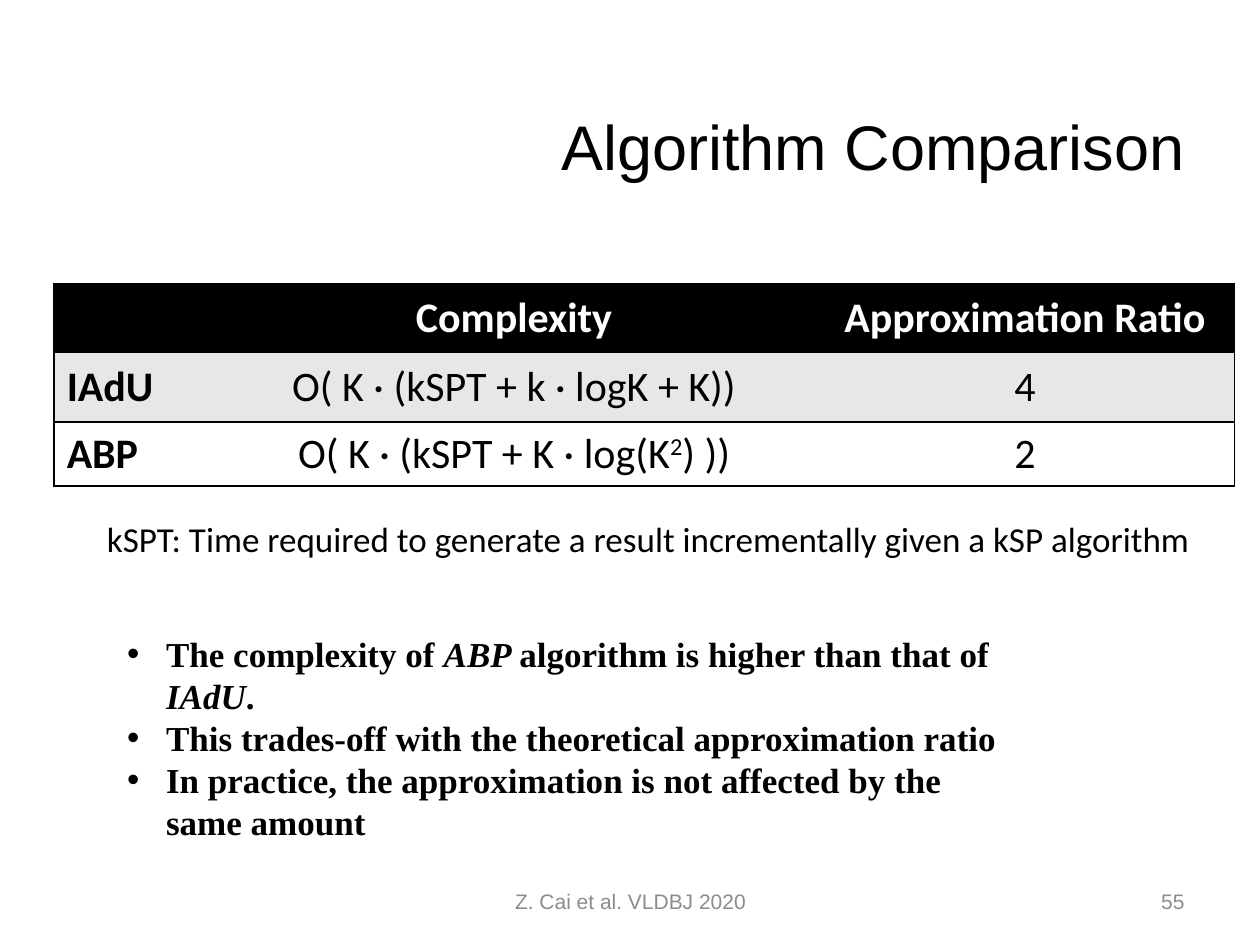
from lxml import etree
from pptx import Presentation
from pptx.dml.color import RGBColor
from pptx.enum.text import MSO_ANCHOR, PP_ALIGN
from pptx.oxml.ns import qn
from pptx.util import Inches, Pt

LEFT, CENTER, RIGHT = PP_ALIGN.LEFT, PP_ALIGN.CENTER, PP_ALIGN.RIGHT
TOP, MIDDLE = MSO_ANCHOR.TOP, MSO_ANCHOR.MIDDLE
SLIDE_WIDTH, SLIDE_HEIGHT = Inches(10), Inches(7.5)
COLORS = {"black": "000000", "white": "FFFFFF", "band": "E7E7E7", "footer": "8C8C8C"}

COLUMN_SHARES = (12.6, 47.8, 33.3)
ROW_SHARES = (7.33, 7.33, 6.8)
ROW_FILLS = ("black", "band", "white")
# Text pieces are (text, style); style is "", "italic" or "superscript".
COMPARISON = [
    [[], [("Complexity", "")], [("Approximation Ratio", "")]],
    [[("IAdU", "")], [("O( K · (kSPT + k · logK + K))", "")], [("4", "")]],
    [[("ABP", "")],
     [("O( K · (kSPT + K · log(K", ""), ("2", "superscript"), (") ))", "")],
     [("2", "")]],
]
FINDINGS = [
    [("The complexity of ", ""), ("ABP ", "italic"),
     ("algorithm is higher than that of ", ""), ("IAdU", "italic"), (".", "")],
    [("This trades-off with the theoretical approximation ratio", "")],
    [("In practice, the approximation is not affected by the same amount", "")],
]


def across(share):
    """Length of a percentage of the slide width."""
    return int(SLIDE_WIDTH * share / 100)


def down(share):
    """Length of a percentage of the slide height."""
    return int(SLIDE_HEIGHT * share / 100)


def write_pieces(paragraph, pieces, font_name, size, color, bold=False):
    for text, style in pieces:
        run = paragraph.add_run()
        run.text = text
        run.font.name = font_name
        run.font.size = Pt(size)
        run.font.bold = bold
        run.font.italic = style == "italic"
        run.font.color.rgb = RGBColor.from_string(COLORS[color])
        if style == "superscript":
            run._r.get_or_add_rPr().set("baseline", "30000")


def add_text_frame(slide, shares, anchor=TOP):
    """Add a wrapping text box at left, top, width, height in percent."""
    left, top, width, height = shares
    box = slide.shapes.add_textbox(across(left), down(top), across(width), down(height))
    box.text_frame.word_wrap = True
    box.text_frame.vertical_anchor = anchor
    return box.text_frame


def add_line_of_text(slide, shares, text, font_name, size, color="black",
                     alignment=LEFT, anchor=MIDDLE):
    paragraph = add_text_frame(slide, shares, anchor).paragraphs[0]
    paragraph.alignment = alignment
    write_pieces(paragraph, [(text, "")], font_name, size, color)


def add_bullets(slide, shares, items):
    text_frame = add_text_frame(slide, shares)
    for index, pieces in enumerate(items):
        paragraph = text_frame.add_paragraph() if index else text_frame.paragraphs[0]
        properties = paragraph._p.get_or_add_pPr()
        properties.set("marL", str(Inches(0.31)))
        properties.set("indent", str(-Inches(0.31)))
        etree.SubElement(properties, qn("a:buFont")).set("typeface", "Arial")
        etree.SubElement(properties, qn("a:buChar")).set("char", "•")
        write_pieces(paragraph, pieces, "Times New Roman", 20, "black", bold=True)


def set_borders(cell, visible_sides):
    properties = cell._tc.get_or_add_tcPr()
    for side in "LRTB":
        line = etree.SubElement(properties, qn(f"a:ln{side}"), w=str(Pt(1)))
        if side in visible_sides:
            fill = etree.SubElement(line, qn("a:solidFill"))
            etree.SubElement(fill, qn("a:srgbClr")).set("val", COLORS["black"])
        else:
            etree.SubElement(line, qn("a:noFill"))


def add_comparison_table(slide, left, top):
    frame = slide.shapes.add_table(
        len(ROW_SHARES), len(COLUMN_SHARES), across(left), down(top),
        across(sum(COLUMN_SHARES)), down(sum(ROW_SHARES)))
    table = frame.table
    table.first_row = table.horz_banding = False
    for column, share in zip(table.columns, COLUMN_SHARES):
        column.width = across(share)
    for row, share in zip(table.rows, ROW_SHARES):
        row.height = down(share)

    outer_sides = ("LTB", "TB", "TBR")
    for row_index, row_cells in enumerate(COMPARISON):
        is_header = row_index == 0
        for column_index, pieces in enumerate(row_cells):
            cell = table.cell(row_index, column_index)
            set_borders(cell, outer_sides[column_index])
            cell.fill.solid()
            cell.fill.fore_color.rgb = RGBColor.from_string(COLORS[ROW_FILLS[row_index]])
            cell.vertical_anchor = MIDDLE
            paragraph = cell.text_frame.paragraphs[0]
            paragraph.alignment = CENTER if column_index else LEFT
            write_pieces(paragraph, pieces, "Calibri", 24,
                         "white" if is_header else "black",
                         bold=is_header or column_index == 0)


def main():
    presentation = Presentation()
    presentation.slide_width, presentation.slide_height = SLIDE_WIDTH, SLIDE_HEIGHT
    slide = presentation.slides.add_slide(presentation.slide_layouts[6])

    add_line_of_text(slide, (21.7, 7.07, 73.3, 16.67), "Algorithm Comparison",
                     "Arial", 36, alignment=RIGHT)
    add_comparison_table(slide, 4.3, 30)
    add_line_of_text(
        slide, (7.5, 54.13, 88.2, 5.87),
        "kSPT: Time required to generate a result incrementally given a kSP algorithm",
        "Calibri", 20, anchor=TOP)
    add_bullets(slide, (9.1, 66.27, 73.2, 23.73), FINDINGS)
    add_line_of_text(slide, (34.2, 92.67, 31.7, 5.33), "Z. Cai et al. VLDBJ 2020",
                     "Arial", 12, "footer", CENTER)
    add_line_of_text(slide, (71.7, 92.67, 23.3, 5.33), "55", "Arial", 12, "footer", RIGHT)
    presentation.save("out.pptx")


if __name__ == "__main__":
    main()
